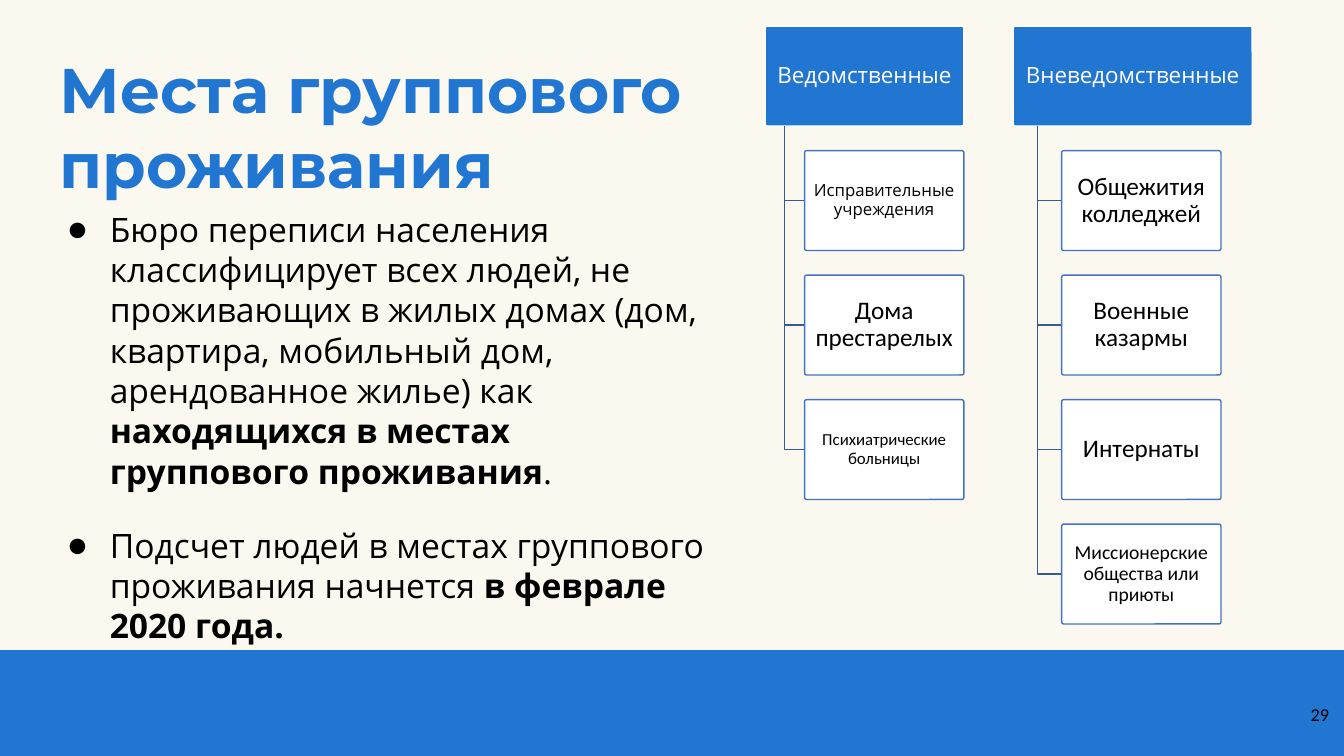
import pptx
import pptx.util
import pptx.dml.color
import pptx.enum.shapes
import pptx.enum.text
from dataclasses import dataclass
from lxml import etree

Inches = pptx.util.Inches
Pt = pptx.util.Pt
RGB = pptx.dml.color.RGBColor.from_string
SHAPE = pptx.enum.shapes.MSO_SHAPE
ALIGN = pptx.enum.text.PP_ALIGN
ANCHOR = pptx.enum.text.MSO_ANCHOR


@dataclass(frozen=True)
class Theme:
    paper: str = "FBF9EF"
    blue: str = "2176D2"
    white: str = "FFFFFF"
    ink: str = "000000"
    box_line: str = "4372C3"
    tree_line: str = "345A99"
    title_font: str = "Montserrat"
    body_font: str = "Open Sans"
    label_font: str = "Calibri"
    title: int = 45
    body: int = 24
    header: int = 16
    large: int = 18
    medium: int = 14
    small: int = 12
    number: int = 13


class Builder:
    def __init__(self, prs, theme):
        self.t = theme
        self.s = prs.slides.add_slide(prs.slide_layouts[6])
        fill = self.s.background.fill
        fill.solid()
        fill.fore_color.rgb = RGB(theme.paper)

    def apply(self, target, formats):
        for name, value in formats.items():
            setattr(target, name, value)

    def run(self, p, text, font, size, color, bold=False):
        r = p.add_run()
        r.text = text
        self.apply(r.font, {"name": font, "size": Pt(size), "bold": bold})
        r.font.color.rgb = RGB(color)

    def shape(self, kind, box, fill, line=None):
        sp = self.s.shapes.add_shape(kind, *map(Inches, box))
        sp.shadow.inherit = False
        sp.fill.solid()
        sp.fill.fore_color.rgb = RGB(fill)
        if line:
            sp.line.color.rgb = RGB(line)
            sp.line.width = Pt(1)
        else:
            sp.line.fill.background()
        return sp

    def node(self, box, text, font, size, color, fill, line):
        sp = self.shape(SHAPE.ROUNDED_RECTANGLE, box, fill, line)
        sp.adjustments[0] = 0.02
        tf = sp.text_frame
        self.apply(tf, {
            "word_wrap": True, "vertical_anchor": ANCHOR.MIDDLE,
            "margin_left": Inches(0.05), "margin_right": Inches(0.05),
            "margin_top": Inches(0.05), "margin_bottom": Inches(0.05),
        })
        p = tf.paragraphs[0]
        self.apply(p, {"alignment": ALIGN.CENTER, "line_spacing": 0.9})
        self.run(p, text, font, size, color)

    def elbow(self, x, top, end_x, end_y):
        fb = self.s.shapes.build_freeform(Inches(x), Inches(top))
        fb.add_line_segments([(Inches(x), Inches(end_y)),
                              (Inches(end_x), Inches(end_y))], close=False)
        sp = fb.convert_to_shape()
        sp.shadow.inherit = False
        sp.fill.background()
        sp.line.color.rgb = RGB(self.t.tree_line)
        sp.line.width = Pt(1)

    def text(self, box):
        tf = self.s.shapes.add_textbox(*map(Inches, box)).text_frame
        tf.word_wrap = True
        return tf

    def line_text(self, box, text, font, size, color, bold=False, align=ALIGN.LEFT):
        p = self.text(box).paragraphs[0]
        p.alignment = align
        self.run(p, text, font, size, color, bold)

    def bullets(self, box, items):
        tf = self.text(box)
        qn = pptx.oxml.ns.qn
        for i, runs in enumerate(items):
            p = tf.add_paragraph() if i else tf.paragraphs[0]
            self.apply(p, {"line_spacing": 1.0, "space_before": Pt(24 if i else 0)})
            pPr = p._p.get_or_add_pPr()
            pPr.set("marL", str(Inches(0.5)))
            pPr.set("indent", str(Inches(-0.42)))
            color = etree.SubElement(pPr, qn("a:buClr"))
            etree.SubElement(color, qn("a:srgbClr")).set("val", self.t.ink)
            etree.SubElement(pPr, qn("a:buFont")).set("typeface", self.t.label_font)
            etree.SubElement(pPr, qn("a:buChar")).set("char", "●")
            for text, bold in runs:
                self.run(p, text, self.t.body_font, self.t.body, self.t.ink, bold)

    def tree(self, x, width, trunk_x, box_x, header, children):
        t = self.t
        top, height, box_w = 0.26, 0.99, 1.58
        pitch = (5.2 - top) / 4
        self.node((x, top, width, height), header, t.body_font, t.header,
                  t.white, t.blue, t.white)
        for i, (label, font, size) in enumerate(children, 1):
            y = top + i * pitch
            self.elbow(trunk_x, top + height, box_x, y + height / 2)
            self.node((box_x, y, box_w, height), label, font, size,
                      t.ink, t.white, t.box_line)


def main():
    prs = pptx.Presentation()
    prs.slide_width, prs.slide_height = Inches(13.33), Inches(7.5)
    t = Theme()
    b = Builder(prs, t)

    # Footer band and slide number
    b.shape(SHAPE.RECTANGLE, (0, 6.45, 13.33, 1.05), t.blue)
    b.line_text((12.48, 6.93, 0.8, 0.57), "29", t.label_font, t.number, t.ink,
                align=ALIGN.RIGHT)

    # Title
    b.line_text((0.49, 0.45, 10.3, 0.86), "Места группового проживания",
                t.title_font, t.title, t.blue, bold=True)

    # Trees of group quarters
    b.tree(7.59, 1.97, 7.78, 7.98, "Ведомственные", [
        ("Исправительные учреждения", t.body_font, t.small),
        ("Дома престарелых", t.label_font, t.large),
        ("Психиатрические больницы", t.label_font, t.small),
    ])
    b.tree(10.05, 2.37, 10.29, 10.53, "Вневедомственные", [
        ("Общежития колледжей", t.label_font, t.large),
        ("Военные казармы", t.label_font, t.large),
        ("Интернаты", t.label_font, t.large),
        ("Миссионерские общества или приюты", t.label_font, t.medium),
    ])

    # Explanation
    b.bullets((0.49, 2.02, 6.71, 4.25), [
        [("Бюро переписи населения классифицирует всех людей, не проживающих "
          "в жилых домах (дом, квартира, мобильный дом, арендованное жилье) как ", False),
         ("находящихся в местах группового проживания", True),
         (".", False)],
        [("Подсчет людей в местах группового проживания начнется", False),
         (" в феврале 2020 года.", True)],
    ])

    prs.save("out.pptx")


if __name__ == "__main__":
    main()
